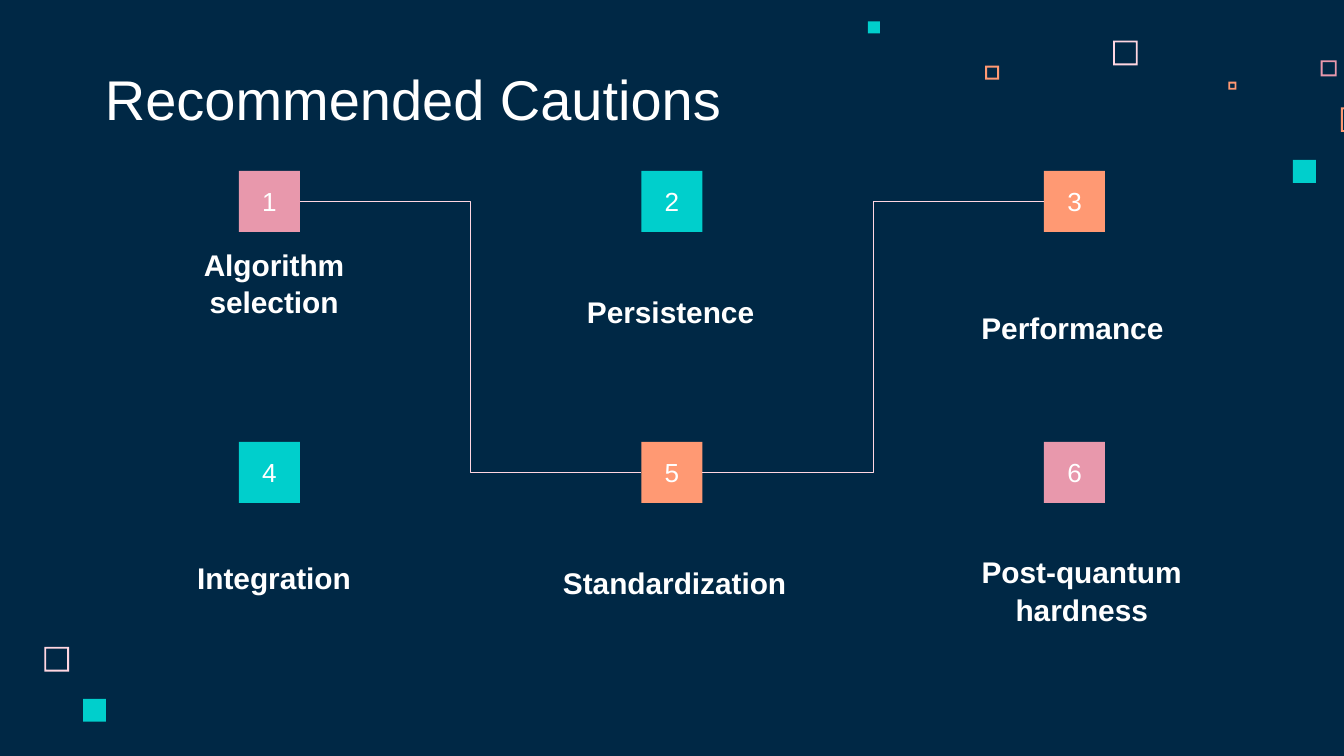
"""Build the Recommended Cautions slide."""
from lxml.etree import SubElement
from pptx import Presentation
from pptx.dml.color import RGBColor
from pptx.enum.shapes import MSO_CONNECTOR, MSO_SHAPE
from pptx.enum.text import MSO_ANCHOR, MSO_AUTO_SIZE, PP_ALIGN
from pptx.oxml.ns import qn
from pptx.util import Pt

NAVY = RGBColor(0x00, 0x28, 0x45)
WHITE = RGBColor(0xFF, 0xFF, 0xFF)
BLUSH = RGBColor(0xFF, 0xD6, 0xE1)
PINK = RGBColor(0xE8, 0x98, 0xAC)
ORANGE = RGBColor(0xFF, 0x99, 0x73)
TEAL = RGBColor(0x00, 0xCF, 0xCC)

TILE = 32.7
TILE_LEFT, TILE_TOP = 128, 91.6
COLUMN_STEP, ROW_STEP = 215.65, 145.2
TILE_COLORS = [PINK, TEAL, ORANGE, TEAL, ORANGE, PINK]
LEFT_SITE, RIGHT_SITE = 1, 3

LABELS = [
    ("Algorithm selection", 72.7, 142.6),
    ("Persistence", 285.1, 147.6),
    ("Performance", 500.4, 156.2),
    ("Integration", 72.7, 290.2),
    ("Standardization", 287.3, 293),
    ("Post-quantum hardness", 505.4, 307.4),
]
FRAMES = [
    (596.3, 21.8, 13.2, BLUSH),
    (707.5, 32.3, 8.6, PINK),
    (658.1, 43.8, 4.3, ORANGE),
    (718.4, 57.6, 13.1, ORANGE),
    (527.8, 35.2, 7.4, ORANGE),
    (23.8, 346.6, 13.2, BLUSH),
]
SQUARES = [(692.7, 85.7, 12.3), (464.9, 11.4, 6.5), (44.5, 374.4, 12.3)]


def paint(shape, color):
    """Give a shape a plain fill without line or shadow."""
    shape.shadow.inherit = False
    shape.fill.solid()
    shape.fill.fore_color.rgb = color
    shape.line.fill.background()


def corners(left, top, size):
    """Return the corner points of a square."""
    right, bottom = left + size, top + size
    points = [(left, top), (left, bottom), (right, bottom), (right, top)]
    return [(Pt(x), Pt(y)) for x, y in points]


def add_frame(page, left, top, size, color):
    """Add a thin hollow square."""
    outer = corners(left, top, size)
    inner = corners(left + 1, top + 1, size - 2)[::-1]
    builder = page.shapes.build_freeform(*outer[0])
    builder.add_line_segments(outer[1:], close=True)
    builder.move_to(*inner[0])
    builder.add_line_segments(inner[1:], close=True)
    paint(builder.convert_to_shape(), color)


def add_square(page, left, top, size, color):
    """Add a filled square."""
    square = page.shapes.add_shape(
        MSO_SHAPE.RECTANGLE, Pt(left), Pt(top), Pt(size), Pt(size))
    paint(square, color)
    return square


def write(box, text, size, anchor, align=PP_ALIGN.CENTER, bold=False):
    """Write one white paragraph into a box."""
    frame = box.text_frame
    frame.text = text
    frame.word_wrap = True
    frame.auto_size = MSO_AUTO_SIZE.NONE
    frame.vertical_anchor = anchor
    frame.margin_left = frame.margin_right = Pt(7.2)
    frame.margin_top = frame.margin_bottom = Pt(7.2)
    para = frame.paragraphs[0]
    para.alignment = align
    para.font.name = "Arial"
    para.font.size = Pt(size)
    para.font.bold = bold
    para.font.color.rgb = WHITE


def add_title(page):
    """Place and format the title placeholder."""
    title = page.shapes.title
    title.left, title.top = Pt(49), Pt(32.4)
    title.width, title.height = Pt(372), Pt(45.4)
    write(title, "Recommended Cautions", 30, MSO_ANCHOR.BOTTOM, PP_ALIGN.LEFT)


def add_label(page, text, left, top):
    """Add a bold caution label."""
    box = page.shapes.add_textbox(Pt(left), Pt(top), Pt(148.3), Pt(36))
    write(box, text, 16, MSO_ANCHOR.BOTTOM, bold=True)
    box.text_frame.paragraphs[0].line_spacing = 1.05


def add_tile(page, index, color):
    """Add a numbered tile at its place in the grid."""
    row, column = divmod(index, 3)
    left = TILE_LEFT + column * COLUMN_STEP
    top = TILE_TOP + row * ROW_STEP
    tile = add_square(page, left, top, TILE, color)
    write(tile, str(index + 1), 14, MSO_ANCHOR.MIDDLE)
    return tile


def link(page, start, end):
    """Join the right side of one tile to the left side of another."""
    line = page.shapes.add_connector(MSO_CONNECTOR.ELBOW, 0, 0, 0, 0)
    line.begin_connect(start, RIGHT_SITE)
    line.end_connect(end, LEFT_SITE)
    line.line.color.rgb = BLUSH
    line.line.width = Pt(0.75)
    SubElement(line._element.spPr, qn("a:effectLst"))


def main():
    """Build and save the deck."""
    deck = Presentation()
    deck.slide_width, deck.slide_height = Pt(720), Pt(405)
    page = deck.slides.add_slide(deck.slide_layouts[5])
    page.background.fill.solid()
    page.background.fill.fore_color.rgb = NAVY

    for frame in FRAMES:
        add_frame(page, *frame)
    for square in SQUARES:
        add_square(page, *square, TEAL)
    add_title(page)
    for label in LABELS:
        add_label(page, *label)
    tiles = [add_tile(page, index, color)
             for index, color in enumerate(TILE_COLORS)]
    link(page, tiles[0], tiles[4])
    link(page, tiles[4], tiles[2])
    deck.save("out.pptx")


if __name__ == "__main__":
    main()
